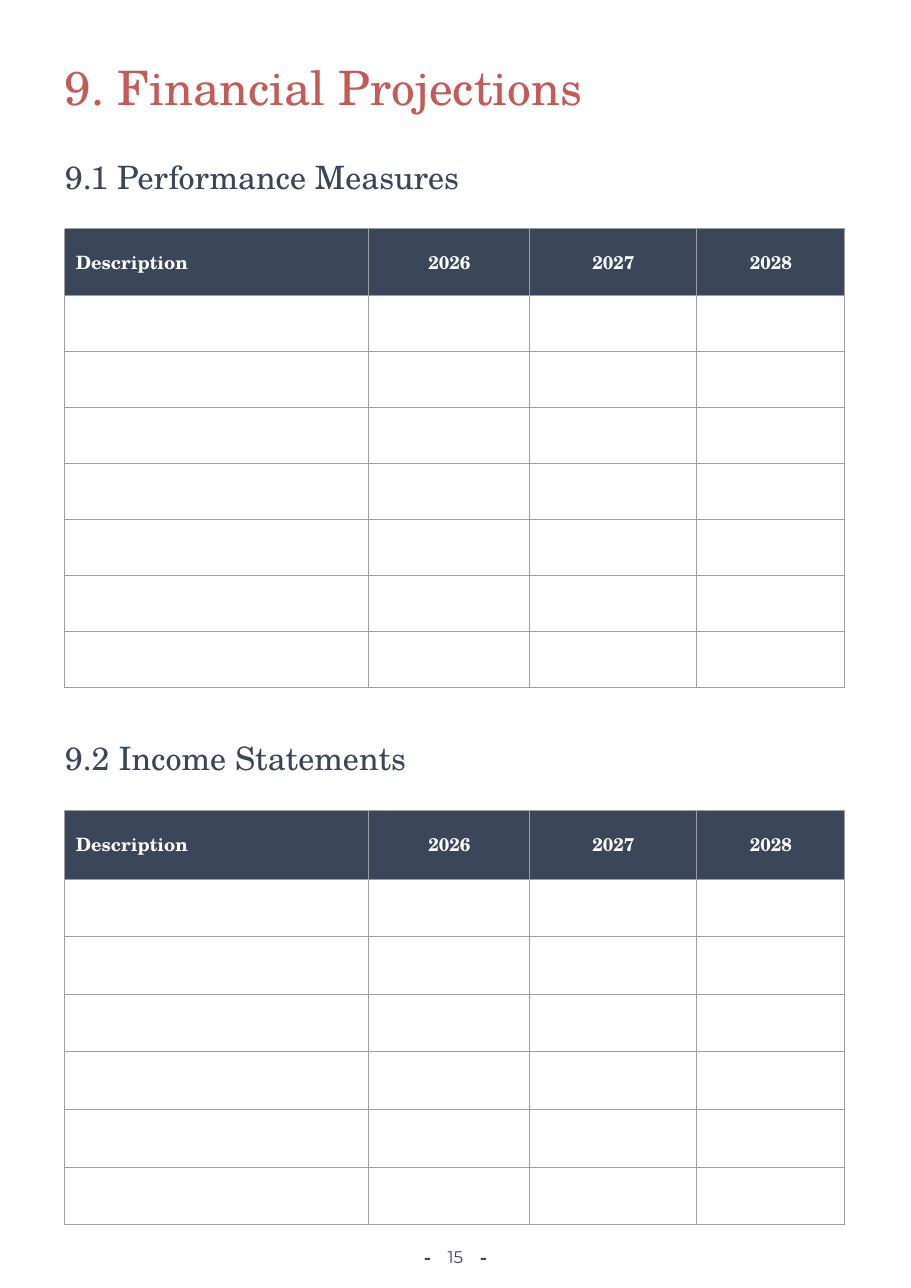
from lxml.etree import SubElement
from pptx import Presentation
from pptx.dml.color import RGBColor
from pptx.enum.shapes import MSO_SHAPE as Preset
from pptx.enum.text import MSO_ANCHOR as Anchor, MSO_AUTO_SIZE as AutoSize, PP_ALIGN as Align
from pptx.oxml.ns import qn
from pptx.util import Pt

EMU_PER_PX = 8298
NAVY = RGBColor(0x3B, 0x46, 0x58)
CORAL = RGBColor(0xC1, 0x5C, 0x58)
GREY = RGBColor(0x9E, 0x9E, 0x9E)
WHITE = RGBColor(0xFF, 0xFF, 0xFF)
SERIF = "TeX Gyre Schola"
SANS = "Montserrat"
LEFT, TEXT_WIDTH = 65, 781
COLUMN_WIDTHS = (304, 161, 167, 148)
HEADINGS = ("Description", "2026", "2027", "2028")


def px(length):
    return length * EMU_PER_PX


class Page:
    """Draws the headings, tables and page number of one report page."""

    def __init__(self, slide):
        self.slide = slide

    def style_text(self, paragraph, words, size, color, font=SERIF, align=Align.LEFT, bold=False):
        paragraph.text = words
        paragraph.alignment = align
        paragraph.font.name = font
        paragraph.font.size = Pt(size)
        paragraph.font.bold = bold
        paragraph.font.color.rgb = color

    def text(self, shapes, words, left, top, width, height, size, color, **style):
        frame = shapes.add_textbox(px(left), px(top), px(width), px(height)).text_frame
        frame.margin_left = frame.margin_right = frame.margin_top = frame.margin_bottom = 0
        frame.word_wrap = True
        frame.auto_size = AutoSize.SHAPE_TO_FIT_TEXT
        self.style_text(frame.paragraphs[0], words, size, color, **style)

    def heading(self, words, top, height, size, color):
        self.text(self.slide.shapes, words, LEFT, top, TEXT_WIDTH, height, size, color)

    def borders(self, cell):
        properties = cell._tc.get_or_add_tcPr()
        for side in ("a:lnL", "a:lnR", "a:lnT", "a:lnB"):
            line = SubElement(properties, qn(side), w=str(Pt(0.75)))
            fill = SubElement(line, qn("a:solidFill"))
            SubElement(fill, qn("a:srgbClr"), val=str(GREY))

    def projections(self, top, header_height, body_height, body_rows):
        table = self.slide.shapes.add_table(
            body_rows + 1, len(HEADINGS), px(LEFT), px(top),
            px(sum(COLUMN_WIDTHS)), px(header_height + body_height)).table
        table.first_row = table.horz_banding = False
        for column, width in zip(table.columns, COLUMN_WIDTHS):
            column.width = px(width)
        for row in table.rows:
            row.height = px(body_height) // body_rows
        table.rows[0].height = px(header_height)
        for cell in table.iter_cells():
            self.borders(cell)
            cell.fill.background()
        for index, words in enumerate(HEADINGS):
            cell = table.cell(0, index)
            cell.fill.solid()
            cell.fill.fore_color.rgb = NAVY
            cell.vertical_anchor = Anchor.MIDDLE
            cell.margin_left = cell.margin_right = px(11)
            cell.margin_top = cell.margin_bottom = px(11)
            align = Align.CENTER if index else Align.LEFT
            self.style_text(cell.text_frame.paragraphs[0], words, 12, WHITE, align=align, bold=True)

    def page_number(self, number):
        shapes = self.slide.shapes.add_group_shape().shapes
        self.text(shapes, number, 436, 1247, 39, 21, 11, NAVY, font=SANS, align=Align.CENTER)
        for left in (425, 481):
            dash = shapes.add_shape(Preset.RECTANGLE, px(left), px(1258), px(5), px(2))
            dash.shadow.inherit = False
            dash.fill.solid()
            dash.fill.fore_color.rgb = NAVY
            dash.line.fill.background()


def main():
    report = Presentation()
    report.slide_width, report.slide_height = px(911), px(1288)
    page = Page(report.slides.add_slide(report.slide_layouts[6]))
    page.page_number("15")
    page.heading("9.1 Performance Measures", 157, 39, 21, NAVY)
    page.projections(229, header_height=67, body_height=392, body_rows=7)
    page.heading("9.2 Income Statements", 738, 39, 21, NAVY)
    page.projections(810, header_height=69, body_height=346, body_rows=6)
    page.heading("9. Financial Projections", 58, 57, 31, CORAL)
    report.save("out.pptx")


if __name__ == "__main__":
    main()
